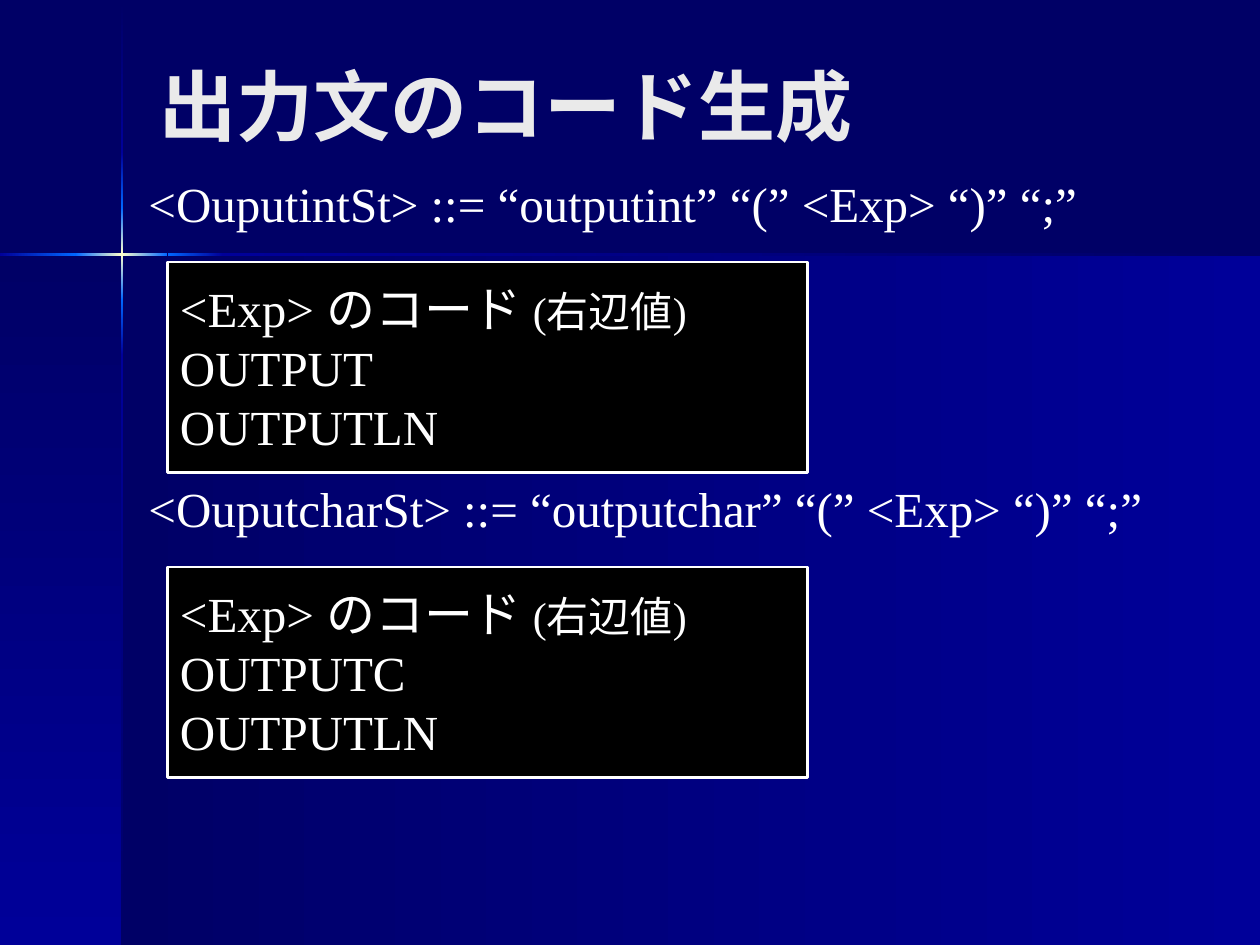
from dataclasses import dataclass
from itertools import pairwise

from lxml.etree import SubElement
from pptx import Presentation
from pptx.dml.color import RGBColor
from pptx.enum.shapes import MSO_SHAPE as Shape
from pptx.enum.text import MSO_ANCHOR as Anchor, PP_ALIGN as Align
from pptx.oxml.ns import qn
from pptx.util import Inches, Pt


@dataclass(frozen=True)
class Theme:
    font: str = "Times New Roman"
    navy: str = "000066"
    blue: str = "000099"
    glow: str = "0066FF"
    flare: str = "FFFFCC"
    title: str = "EAEAEA"
    text: str = "FFFFFF"
    code_fill: str = "000000"
    title_size: int = 44
    body_size: int = 28
    note_size: int = 24
    border: float = 1.5


THEME = Theme()
WIDTH, HEIGHT = 10, 7.5
CROSS_X, CROSS_Y, BEAM = 0.97, 2.02, 0.02


def rgb(color):
    return RGBColor.from_string(color)


def add_rect(slide, box):
    rect = slide.shapes.add_shape(Shape.RECTANGLE, *map(Inches, box))
    rect.shadow.inherit = False
    return rect


def add_gradient(slide, box, colors, vertical=False):
    """Add a borderless rectangle shading evenly through the colours."""
    band = add_rect(slide, box)
    band.line.fill.background()
    band.fill.gradient()
    band.fill.gradient_angle = 270 if vertical else 0
    stops = band.fill._fill._gradFill.find(qn("a:gsLst"))
    stops.clear()
    for index, color in enumerate(colors):
        position = 100000 * index // (len(colors) - 1)
        stop = SubElement(stops, qn("a:gs"), pos=str(position))
        SubElement(stop, qn("a:srgbClr"), val=color)


def write_text(frame, lines, *, color=THEME.text, size=THEME.body_size,
               bold=False, anchor=Anchor.TOP, wrap=True):
    """Fill a frame; each line is a list of texts or (text, size) pairs."""
    frame.word_wrap = wrap
    frame.vertical_anchor = anchor
    for index, line in enumerate(lines):
        paragraph = frame.paragraphs[0] if index == 0 else frame.add_paragraph()
        paragraph.alignment = Align.LEFT
        for part in line:
            text, part_size = part if isinstance(part, tuple) else (part, size)
            run = paragraph.add_run()
            run.text = text
            run.font.name = THEME.font
            run.font.size = Pt(part_size)
            run.font.bold = bold
            run.font.color.rgb = rgb(color)


def add_text(slide, box, text, **text_format):
    label = slide.shapes.add_textbox(*map(Inches, box))
    write_text(label.text_frame, [[text]], **text_format)


def add_beam(slide, edges, shades, vertical):
    """Lay gradient segments end to end between the given edges."""
    for (start, end), colors in zip(pairwise(edges), shades):
        if vertical:
            box = (CROSS_X - BEAM / 2, start, BEAM, end - start)
        else:
            box = (start, CROSS_Y - BEAM / 2, end - start, BEAM)
        add_gradient(slide, box, colors, vertical)


def add_backdrop(slide):
    slide.background.fill.solid()
    slide.background.fill.fore_color.rgb = rgb(THEME.navy)
    panel_height = HEIGHT - CROSS_Y
    shade = (THEME.navy, THEME.blue)
    add_gradient(slide, (CROSS_X, CROSS_Y, WIDTH - CROSS_X, panel_height), shade)
    add_gradient(slide, (0, CROSS_Y, CROSS_X, panel_height), shade, vertical=True)

    rise = (THEME.blue, THEME.glow)
    core = (THEME.glow, THEME.flare, THEME.glow)
    fading = [core, rise[::-1], shade[::-1]]
    add_beam(slide, (0.01, 1.21, 1.65, 2.38, 2.82, HEIGHT),
             [shade, rise, *fading], vertical=True)
    add_beam(slide, (0, 0.6, 1.33, 1.77, WIDTH), [rise, *fading], vertical=False)


def add_rule(slide, box, grammar, instruction):
    """Add a grammar rule with its generated code framed below."""
    left, top, width, height = box
    add_text(slide, (left, top, width, 0.57), grammar)
    code = add_rect(slide, (left + 0.25, top + 0.75, 5.08, height - 0.75))
    code.fill.solid()
    code.fill.fore_color.rgb = rgb(THEME.code_fill)
    code.line.color.rgb = rgb(THEME.text)
    code.line.width = Pt(THEME.border)
    lines = [["<Exp> のコード ", ("(右辺値)", THEME.note_size)],
             [instruction], ["OUTPUTLN"]]
    write_text(code.text_frame, lines, anchor=Anchor.MIDDLE, wrap=False)


def main():
    deck = Presentation()
    deck.slide_width, deck.slide_height = Inches(WIDTH), Inches(HEIGHT)
    slide = deck.slides.add_slide(deck.slide_layouts[6])
    add_backdrop(slide)
    add_text(slide, (1.17, 0.33, 8.33, 0.92), "出力文のコード生成",
             color=THEME.title, size=THEME.title_size, bold=True,
             anchor=Anchor.BOTTOM)
    rules = [
        ("<OuputintSt> ::= “outputint” “(” <Exp> “)” “;”", "OUTPUT"),
        ("<OuputcharSt> ::= “outputchar” “(” <Exp> “)” “;”", "OUTPUTC"),
    ]
    for index, (grammar, instruction) in enumerate(rules):
        box = (1.08, 1.33 + 2.42 * index, 8.42, 2.42)
        add_rule(slide, box, grammar, instruction)
    deck.save("out.pptx")


if __name__ == "__main__":
    main()
